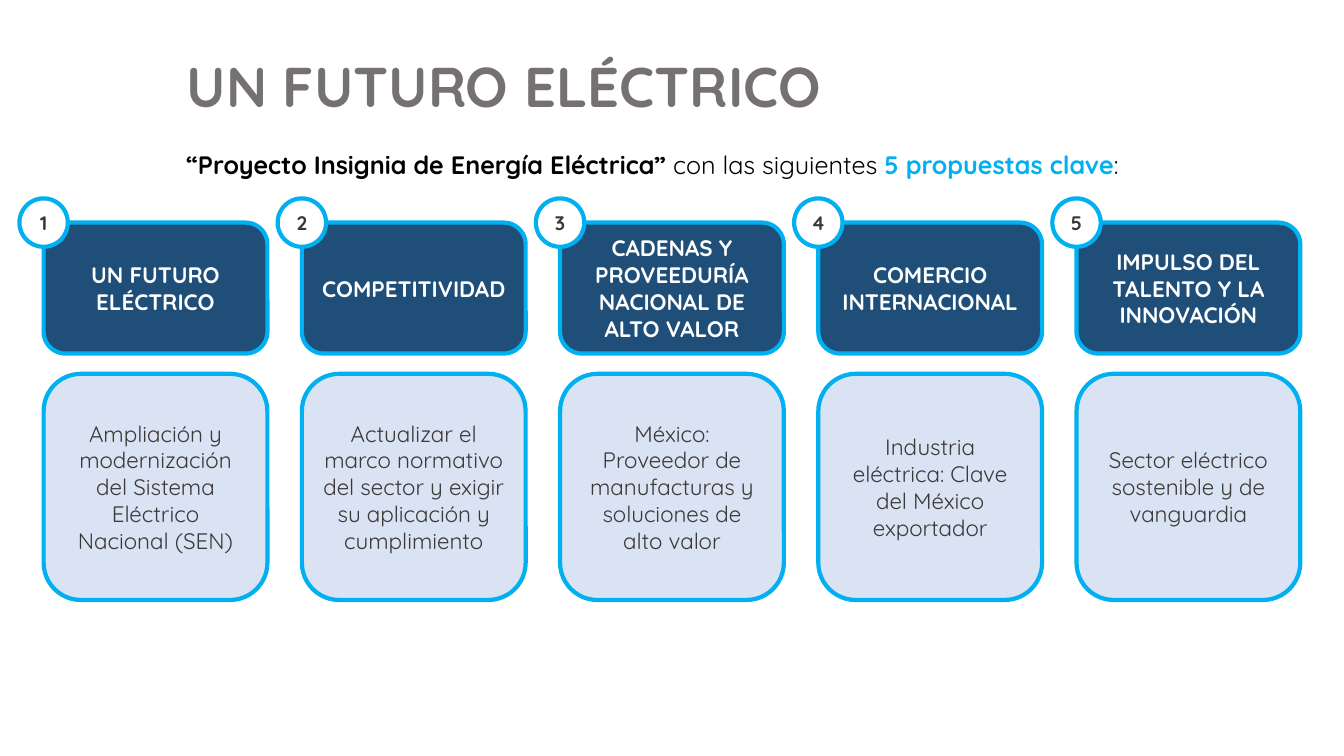
from dataclasses import dataclass

from pptx import Presentation
from pptx.dml.color import RGBColor
from pptx.enum.shapes import MSO_SHAPE
from pptx.enum.text import MSO_ANCHOR, PP_ALIGN
from pptx.util import Cm, Pt


@dataclass(frozen=True)
class Theme:
    """Colours, font and type sizes of the slide."""
    font: str = "Quicksand"
    title: str = "767171"
    black: str = "000000"
    white: str = "FFFFFF"
    ink: str = "3B3838"
    sky: str = "00B0F0"
    navy: str = "1F4E79"
    pale: str = "DAE3F3"
    head: int = 40
    lead: int = 18
    body: int = 16
    badge: int = 14
    line: int = 3


THEME = Theme()
PILLARS = [
    ("UN FUTURO ELÉCTRICO",
     "Ampliación y modernización del Sistema Eléctrico Nacional (SEN)"),
    ("COMPETITIVIDAD",
     "Actualizar el marco normativo del sector y exigir su aplicación y cumplimiento"),
    ("CADENAS Y PROVEEDURÍA NACIONAL DE ALTO VALOR",
     "México: Proveedor de manufacturas y soluciones de alto valor"),
    ("COMERCIO INTERNACIONAL",
     "Industria eléctrica: Clave del México exportador"),
    ("IMPULSO DEL TALENTO Y LA INNOVACIÓN",
     "Sector eléctrico sostenible y de vanguardia"),
]


def add_run(para, text, size, color, bold=False):
    """Append one formatted run to a paragraph."""
    run = para.add_run()
    run.text = text
    run.font.name = THEME.font
    run.font.size = Pt(size)
    run.font.bold = bold
    run.font.color.rgb = RGBColor.from_string(color)


def add_title(slide, box, text):
    """Move the title placeholder into the box and fill it."""
    title = slide.shapes.title
    title.left, title.top, title.width, title.height = map(Cm, box)
    frame = title.text_frame
    frame.word_wrap = True
    frame.vertical_anchor = MSO_ANCHOR.MIDDLE
    para = frame.paragraphs[0]
    para.alignment = PP_ALIGN.LEFT
    para.line_spacing = 0.9
    add_run(para, text, THEME.head, THEME.title, True)


def add_lead(slide, box):
    """Write the sentence that introduces the pillars."""
    frame = slide.shapes.add_textbox(*map(Cm, box)).text_frame
    frame.word_wrap = True
    para = frame.paragraphs[0]
    para.alignment = PP_ALIGN.JUSTIFY
    para.line_spacing = 1.07
    para.space_after = Pt(8)
    for text, color, bold in (
        ("“Proyecto Insignia de Energía Eléctrica” ", THEME.black, True),
        ("con las siguientes ", THEME.black, False),
        ("5 propuestas clave", THEME.sky, True),
        (":", THEME.black, False),
    ):
        add_run(para, text, THEME.lead, color, bold)


def add_card(slide, kind, box, fill, text, size, color, bold=False):
    """Draw one outlined shape with centred text."""
    card = slide.shapes.add_shape(kind, *map(Cm, box))
    card.shadow.inherit = False
    card.fill.solid()
    card.fill.fore_color.rgb = RGBColor.from_string(fill)
    card.line.color.rgb = RGBColor.from_string(THEME.sky)
    card.line.width = Pt(THEME.line)
    frame = card.text_frame
    frame.word_wrap = True
    frame.vertical_anchor = MSO_ANCHOR.MIDDLE
    para = frame.paragraphs[0]
    para.alignment = PP_ALIGN.CENTER
    add_run(para, text, size, color, bold)
    return card


def add_pillar(slide, box, number, name, detail):
    """Stack a heading over a detail card, with a badge on the corner."""
    left, top, width, height = box
    head, body, disc = 3.3, 5.7, 1.22
    add_card(slide, MSO_SHAPE.ROUNDED_RECTANGLE, (left, top, width, head),
             THEME.navy, name, THEME.body, THEME.white, True)
    add_card(slide, MSO_SHAPE.ROUNDED_RECTANGLE,
             (left, top + height - body, width, body),
             THEME.pale, detail, THEME.body, THEME.ink)
    badge = add_card(slide, MSO_SHAPE.OVAL,
                     (left - disc / 2, top - disc / 2, disc, disc),
                     THEME.white, str(number), THEME.badge, THEME.ink, True)
    frame = badge.text_frame
    frame.margin_left = frame.margin_right = 0


def add_pillars(slide, box):
    """Spread the pillars evenly across the box."""
    left, top, width, height = box
    wide = 5.64
    step = (width - wide) / (len(PILLARS) - 1)
    for index, (name, detail) in enumerate(PILLARS):
        add_pillar(slide, (left + index * step, top, wide, height),
                   index + 1, name, detail)


def main():
    """Build and save the slide."""
    deck = Presentation()
    deck.slide_width, deck.slide_height = Cm(33.87), Cm(19.05)
    slide = deck.slides.add_slide(deck.slide_layouts[5])
    add_title(slide, (4.45, 0.41, 28.4, 3.68), "UN FUTURO ELÉCTRICO")
    add_lead(slide, (4.45, 3.58, 27.61, 1.04))
    add_pillars(slide, (1.1, 5.61, 31.67, 9.51))
    deck.save("out.pptx")


if __name__ == "__main__":
    main()
